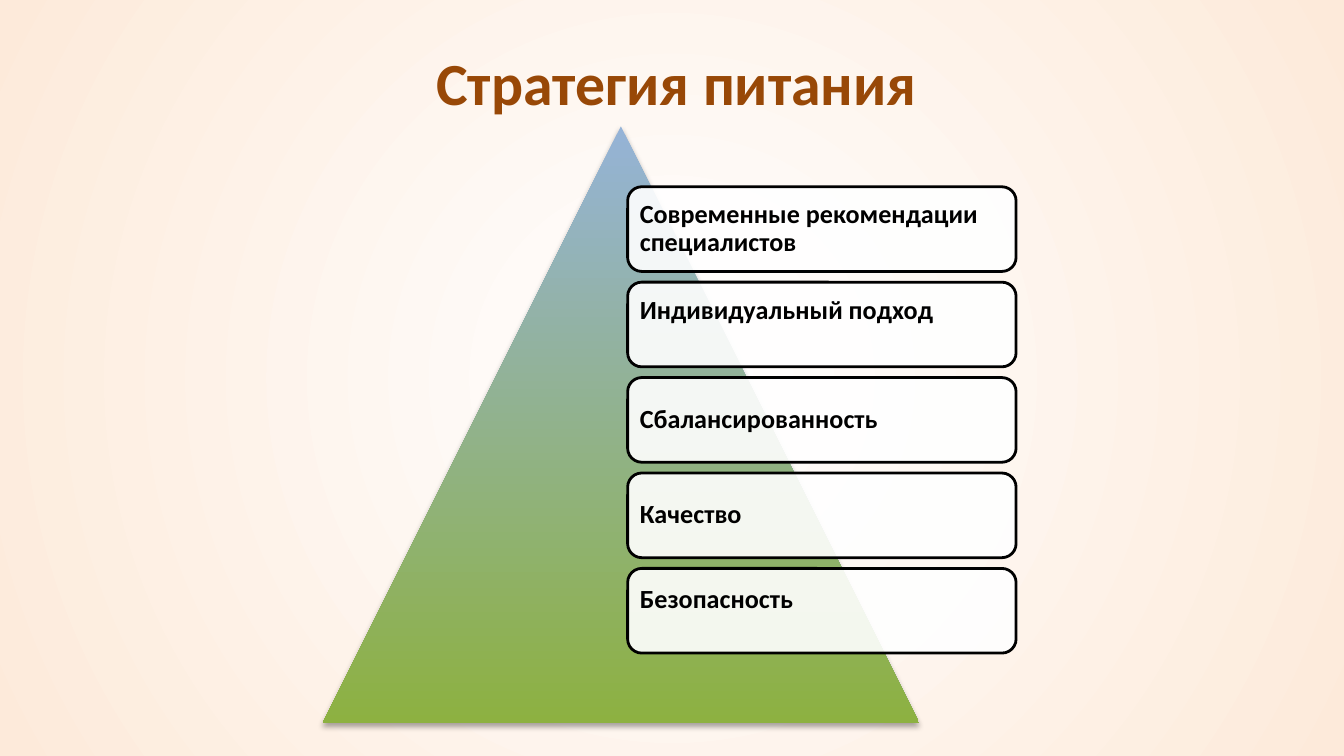
from lxml import etree
from pptx import Presentation
from pptx.dml.color import RGBColor
from pptx.enum.shapes import MSO_SHAPE
from pptx.enum.text import MSO_ANCHOR, MSO_AUTO_SIZE, PP_ALIGN
from pptx.oxml import parse_xml
from pptx.oxml.ns import nsdecls, qn
from pptx.util import Inches, Pt

TRIANGLE, ROUND_RECT = MSO_SHAPE.ISOSCELES_TRIANGLE, MSO_SHAPE.ROUNDED_RECTANGLE
TOP, MIDDLE = MSO_ANCHOR.TOP, MSO_ANCHOR.MIDDLE
LEFT, CENTER = PP_ALIGN.LEFT, PP_ALIGN.CENTER

BLACK = RGBColor(0x00, 0x00, 0x00)
WHITE = RGBColor(0xFF, 0xFF, 0xFF)
PEACH = RGBColor(0xFD, 0xEA, 0xDA)
BROWN = RGBColor(0x98, 0x48, 0x07)
BLUE = RGBColor(0x95, 0xB3, 0xD7)
GREEN = RGBColor(0x8D, 0xB1, 0x41)

# Content: label, anchor, top inset in inches
TITLE = "Стратегия питания"
PRINCIPLES = [
    ("Современные рекомендации специалистов", MIDDLE, 0.09),
    ("Индивидуальный подход", TOP, 0.05),
    ("Сбалансированность", MIDDLE, 0.09),
    ("Качество", MIDDLE, 0.09),
    ("Безопасность", TOP, 0.07),
]

# Layout in inches
BOX_LEFT, BOX_TOP, BOX_W, BOX_H = 4.67, 1.39, 2.89, 0.63
BOX_STEP = 0.71


def write(sp, text, size, color, align=LEFT, anchor=MIDDLE,
          side=0.1, top=0.05, bottom=0.05, spacing=1.0):
    tf = sp.text_frame
    tf.word_wrap = True
    tf.auto_size = MSO_AUTO_SIZE.NONE
    tf.vertical_anchor = anchor
    tf.margin_left = tf.margin_right = Inches(side)
    tf.margin_top, tf.margin_bottom = Inches(top), Inches(bottom)
    p = tf.paragraphs[0]
    p.alignment = align
    p.line_spacing = spacing
    r = p.add_run()
    r.text = text
    r.font.name, r.font.size, r.font.bold = "Calibri", Pt(size), True
    r.font.color.rgb = color


def set_gradient(fill, start, end):
    fill.gradient()
    for stop, color in zip(fill.gradient_stops, (start, end)):
        stop.color.rgb = color


# Widescreen 16:9 slide
prs = Presentation()
prs.slide_width = Inches(10)
prs.slide_height = prs.slide_width * 9 // 16
s = prs.slides.add_slide(prs.slide_layouts[5])

# Background: circular gradient from the centre
set_gradient(s.background.fill, WHITE, PEACH)
grad = s.background._cSld.find(".//" + qn("a:gradFill"))
lin = grad.find(qn("a:lin"))
grad.replace(lin, parse_xml(
    f'<a:path {nsdecls("a")} path="circle">'
    '<a:fillToRect l="50000" t="50000" r="50000" b="50000"/></a:path>'))

# Pyramid with a soft shadow below
pyramid = s.shapes.add_shape(TRIANGLE, Inches(2.4), Inches(0.94), Inches(4.44), Inches(4.44))
set_gradient(pyramid.fill, BLUE, GREEN)
pyramid.fill.gradient_angle = 270
pyramid.line.fill.background()
pyramid.shadow.inherit = False
effects = pyramid._element.spPr.find(qn("a:effectLst"))
effects.append(parse_xml(
    f'<a:outerShdw {nsdecls("a")} blurRad="{Pt(3.1)}" dist="{Pt(1.8)}" dir="5400000" rotWithShape="0">'
    '<a:srgbClr val="000000"><a:alpha val="35000"/></a:srgbClr></a:outerShdw>'))

# Principle boxes, slightly transparent over the pyramid
for i, (label, anchor, top) in enumerate(PRINCIPLES):
    box = s.shapes.add_shape(ROUND_RECT, Inches(BOX_LEFT), Inches(BOX_TOP + i * BOX_STEP),
                             Inches(BOX_W), Inches(BOX_H))
    box.shadow.inherit = False
    box.fill.solid()
    box.fill.fore_color.rgb = WHITE
    rgb = box._element.spPr.find(qn("a:solidFill")).find(qn("a:srgbClr"))
    etree.SubElement(rgb, qn("a:alpha")).set("val", "90000")
    box.line.color.rgb = BLACK
    box.line.width = Pt(1.5)
    write(box, label, 14, BLACK, anchor=anchor, side=0.06, top=top, bottom=0.09,
          spacing=0.9 if anchor == MIDDLE else 1.0)

# Title
title = s.shapes.title
title.left, title.top = Inches(0.21), Inches(0.29)
title.width, title.height = Inches(9.65), Inches(0.64)
write(title, TITLE, 32, BROWN, align=CENTER, anchor=TOP)

prs.save("out.pptx")
